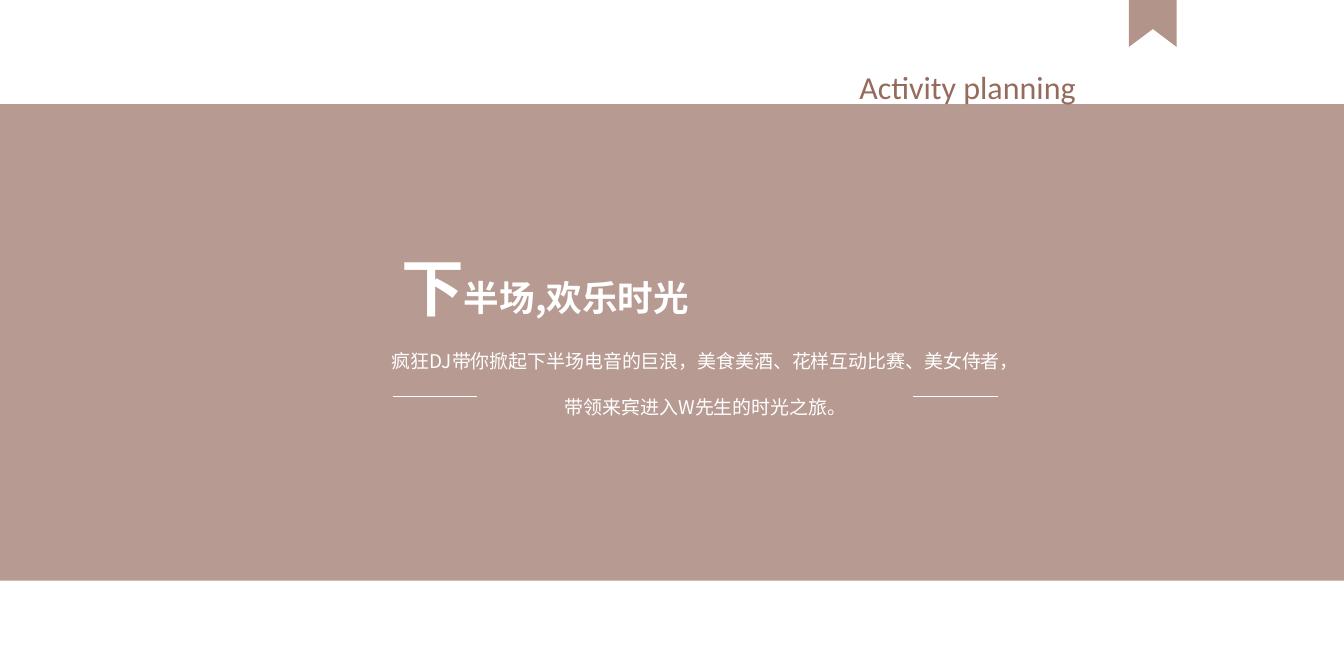
from dataclasses import dataclass

import pptx
import pptx.dml.color
import pptx.enum.shapes
import pptx.enum.text
import pptx.oxml
import pptx.oxml.ns
import pptx.util

Inches = pptx.util.Inches
Align = pptx.enum.text.PP_ALIGN
BROWN = pptx.dml.color.RGBColor(0x95, 0x6B, 0x5D)
WHITE = pptx.dml.color.RGBColor(0xFF, 0xFF, 0xFF)
CJK = "Noto Sans CJK JP"


@dataclass(frozen=True)
class Rule:
    left: float
    top: float = 4.65
    width: float = 0.99


RULES = [Rule(4.6), Rule(10.7)]


def add_xml(parent, tag: str, **attrs: str):
    """Append a DrawingML element to a parent element."""
    el = pptx.oxml.parse_xml(f"<a:{tag} {pptx.oxml.ns.nsdecls('a')}/>")
    for name, value in attrs.items():
        el.set(name, value)
    parent.append(el)
    return el


def fill_brown(sp, opacity: int) -> None:
    """Give a shape a translucent brown fill without line or shadow."""
    sp.shadow.inherit = False
    sp.fill.solid()
    sp.fill.fore_color.rgb = BROWN
    color = sp.element.spPr.find(".//" + pptx.oxml.ns.qn("a:srgbClr"))
    add_xml(color, "alpha", val=str(opacity * 1000))
    sp.line.fill.background()


def set_frame(sp, left: float, top: float, width: float, height: float):
    """Place a text shape and return its prepared text frame."""
    sp.left, sp.top = Inches(left), Inches(top)
    sp.width, sp.height = Inches(width), Inches(height)
    tf = sp.text_frame
    tf.word_wrap = True
    tf.auto_size = pptx.enum.text.MSO_AUTO_SIZE.NONE
    tf.vertical_anchor = pptx.enum.text.MSO_ANCHOR.TOP
    tf.margin_left = tf.margin_right = Inches(0.15)
    tf.margin_top = tf.margin_bottom = Inches(0.08)
    return tf


def add_text(p, text: str, *, size: float, font: str = CJK, color=WHITE,
             bold: bool = False, align=Align.JUSTIFY, spacing: float = 1.0) -> None:
    """Add a formatted run to a paragraph."""
    p.alignment = align
    p.line_spacing = spacing
    p.space_before = pptx.util.Pt(0)
    r = p.add_run()
    r.text = text
    r.font.size = pptx.util.Pt(size)
    r.font.name = font
    r.font.bold = bold
    r.font.color.rgb = color
    add_xml(r.font._element, "ea", typeface=font)


def add_rule(s, rule: Rule) -> None:
    """Draw a thin white horizontal line."""
    y = Inches(rule.top)
    line = s.shapes.add_connector(pptx.enum.shapes.MSO_CONNECTOR.STRAIGHT,
                                  Inches(rule.left), y, Inches(rule.left + rule.width), y)
    line.line.color.rgb = WHITE
    line.line.width = pptx.util.Pt(0.75)
    add_xml(line.element.spPr, "effectLst")


def main() -> None:
    """Build the activity planning slide."""
    prs = pptx.Presentation()
    prs.slide_width, prs.slide_height = Inches(15.75), Inches(7.88)
    s = prs.slides.add_slide(prs.slide_layouts[5])
    title = s.shapes.title

    band = s.shapes.add_shape(pptx.enum.shapes.MSO_SHAPE.RECTANGLE,
                              0, Inches(1.22), prs.slide_width, Inches(5.59))
    fill_brown(band, 68)
    title.element.addprevious(band.element)

    tf = set_frame(title, 9.92, 0.71, 5.39, 0.61)
    add_text(tf.paragraphs[0], "Activity planning", size=27, font="Calibri", color=BROWN)

    tf = set_frame(s.shapes.add_textbox(0, 0, 0, 0), 4.55, 2.84, 6.15, 1.04)
    for text, size in (("下", 53), ("半场,欢乐时光", 30)):
        add_text(tf.paragraphs[0], text, size=size, bold=True)

    tf = set_frame(s.shapes.add_textbox(0, 0, 0, 0), 3.47, 4.02, 9.6, 0.86)
    add_text(tf.paragraphs[0], "疯狂DJ带你掀起下半场电音的巨浪，美食美酒、花样互动比赛、美女侍者，",
             size=16, align=Align.CENTER)
    add_text(tf.add_paragraph(), "带领来宾进入W先生的时光之旅。",
             size=16, align=Align.CENTER, spacing=2.0)

    fb = s.shapes.build_freeform(Inches(13.23), 0)
    fb.add_line_segments([(Inches(x), Inches(y)) for x, y in
                          ((13.79, 0), (13.79, 0.55), (13.51, 0.34), (13.23, 0.55))])
    fill_brown(fb.convert_to_shape(), 72)

    for rule in RULES:
        add_rule(s, rule)
    prs.save("out.pptx")


if __name__ == "__main__":
    main()
